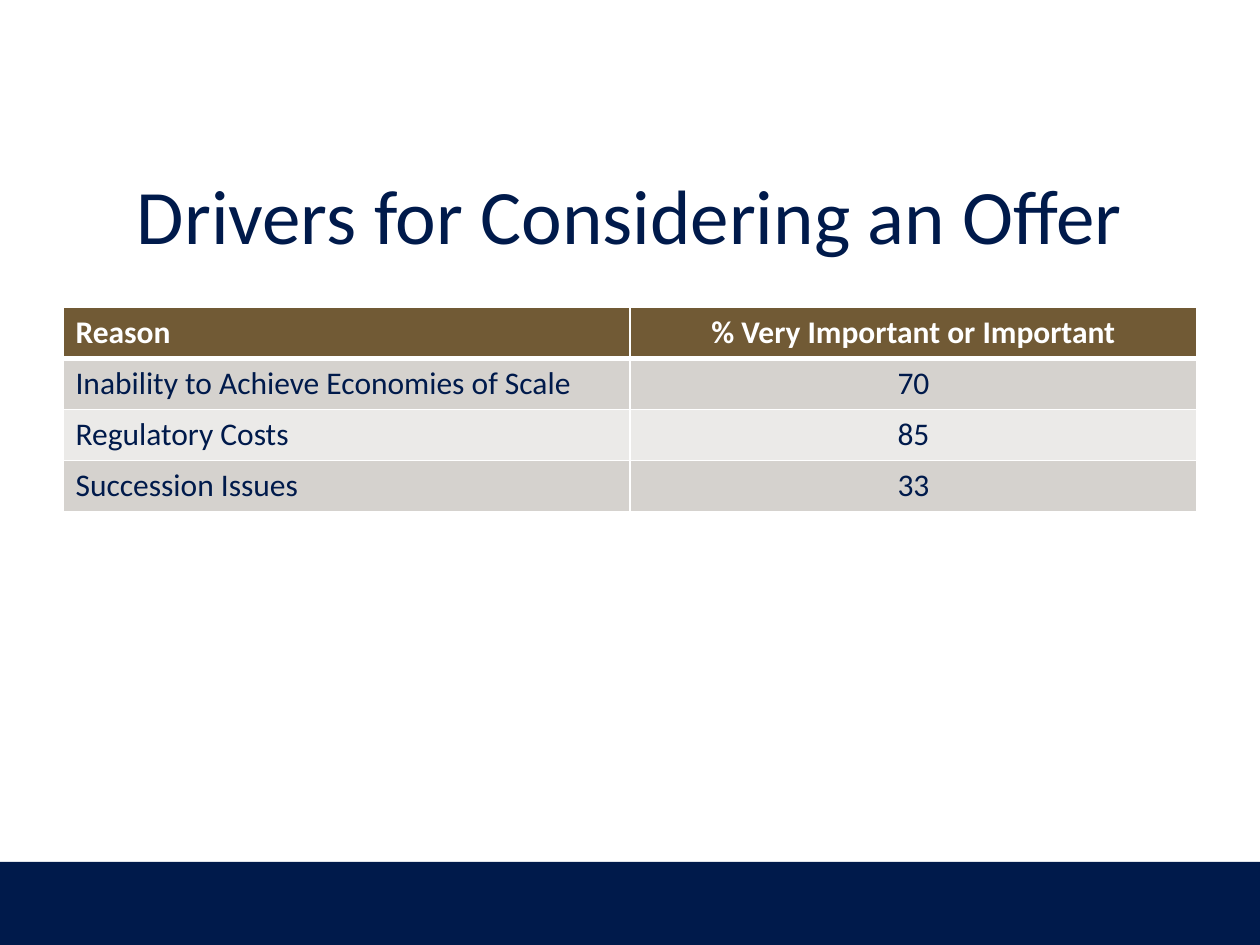
from lxml import etree
from pptx import Presentation
from pptx.dml.color import RGBColor
from pptx.enum.shapes import MSO_SHAPE
from pptx.enum.text import MSO_ANCHOR, PP_ALIGN
from pptx.oxml.ns import qn
from pptx.util import Inches, Pt

RECTANGLE = MSO_SHAPE.RECTANGLE
MIDDLE = MSO_ANCHOR.MIDDLE
LEFT, CENTER = PP_ALIGN.LEFT, PP_ALIGN.CENTER
NAVY, BROWN, WHITE = "001A4B", "715A35", "FFFFFF"
BANDS = ["EBEAE8", "D5D2CE"]
ROWS = [
    ("Reason", "% Very Important or Important"),
    ("Inability to Achieve Economies of Scale", "70"),
    ("Regulatory Costs", "85"),
    ("Succession Issues", "33"),
]


def color(value):
    return RGBColor.from_string(value)


def write(text_frame, text, size, text_color, alignment, bold=False):
    text_frame.text = text
    paragraph = text_frame.paragraphs[0]
    paragraph.alignment = alignment
    font = paragraph.runs[0].font
    font.name = "Calibri"
    font.size = Pt(size)
    font.bold = bold
    font.color.rgb = color(text_color)


presentation = Presentation()
presentation.slide_width = Inches(10)
presentation.slide_height = Inches(7.5)
slide = presentation.slides.add_slide(presentation.slide_layouts[6])
slide.background.fill.solid()
slide.background.fill.fore_color.rgb = color(WHITE)

footer_band = slide.shapes.add_shape(
    RECTANGLE, Inches(0), Inches(6.84), Inches(10), Inches(0.66))
footer_band.shadow.inherit = False
footer_band.fill.solid()
footer_band.fill.fore_color.rgb = color(NAVY)
footer_band.line.fill.background()

title = slide.shapes.add_textbox(Inches(0.5), Inches(1.07), Inches(9), Inches(1.25))
title.text_frame.word_wrap = True
title.text_frame.vertical_anchor = MIDDLE
write(title.text_frame, "Drivers for Considering an Offer", 44, NAVY, CENTER)

table = slide.shapes.add_table(
    len(ROWS), 2, Inches(0.5), Inches(2.44), Inches(9), Inches(1.62)).table
for row_index, row in enumerate(ROWS):
    header = row_index == 0
    for column_index, text in enumerate(row):
        cell = table.cell(row_index, column_index)
        write(cell.text_frame, text, 18, WHITE if header else NAVY,
              CENTER if column_index else LEFT, header)
        widths = {"L": 1, "R": 1, "T": 3 if row_index == 1 else 1, "B": 3 if header else 1}
        for side, width in widths.items():
            border = etree.SubElement(
                cell._tc.get_or_add_tcPr(), qn(f"a:ln{side}"), w=str(Pt(width)))
            border_fill = etree.SubElement(border, qn("a:solidFill"))
            etree.SubElement(border_fill, qn("a:srgbClr"), val=WHITE)
        cell.fill.solid()
        cell.fill.fore_color.rgb = color(BROWN if header else BANDS[row_index % 2])

presentation.save("out.pptx")
